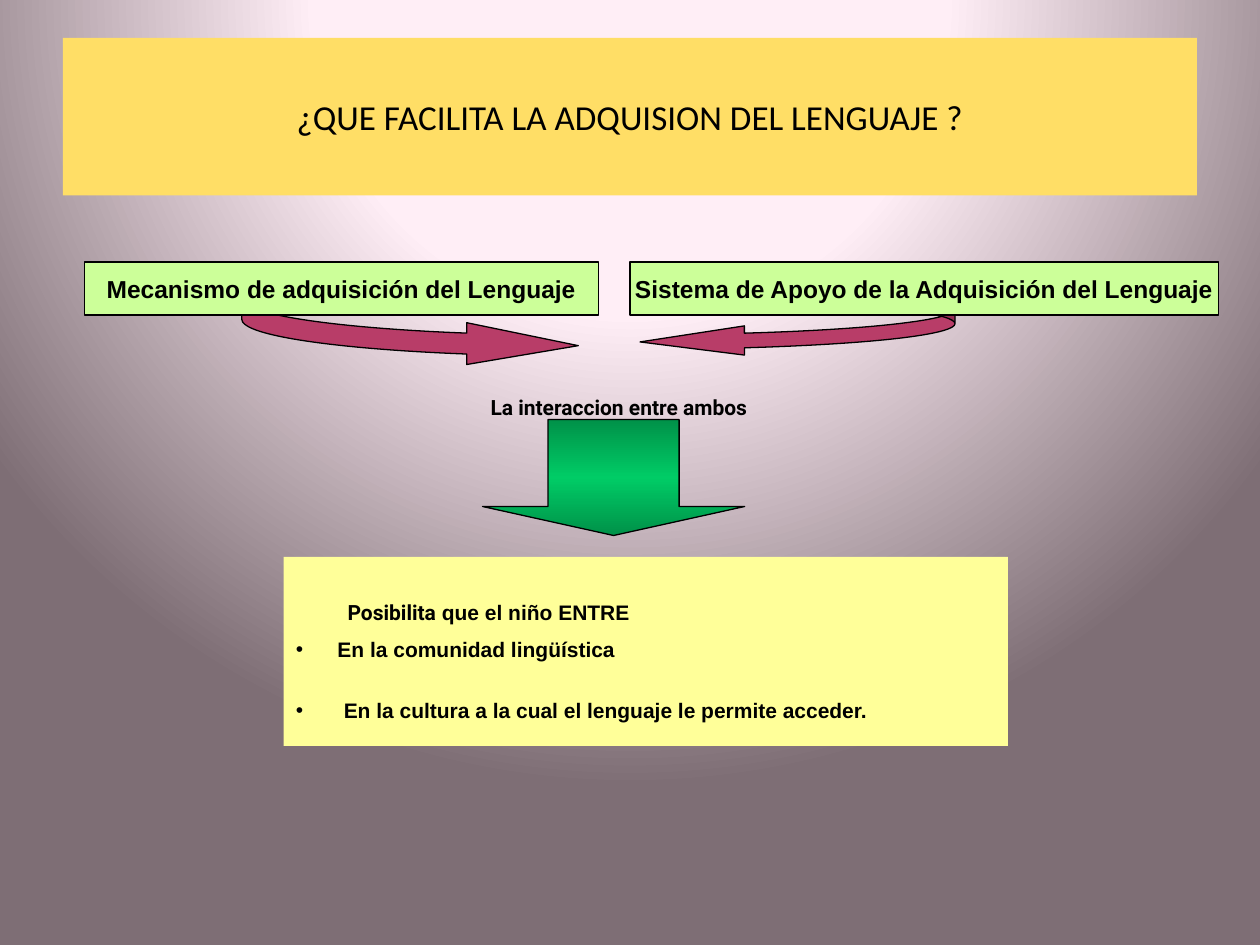
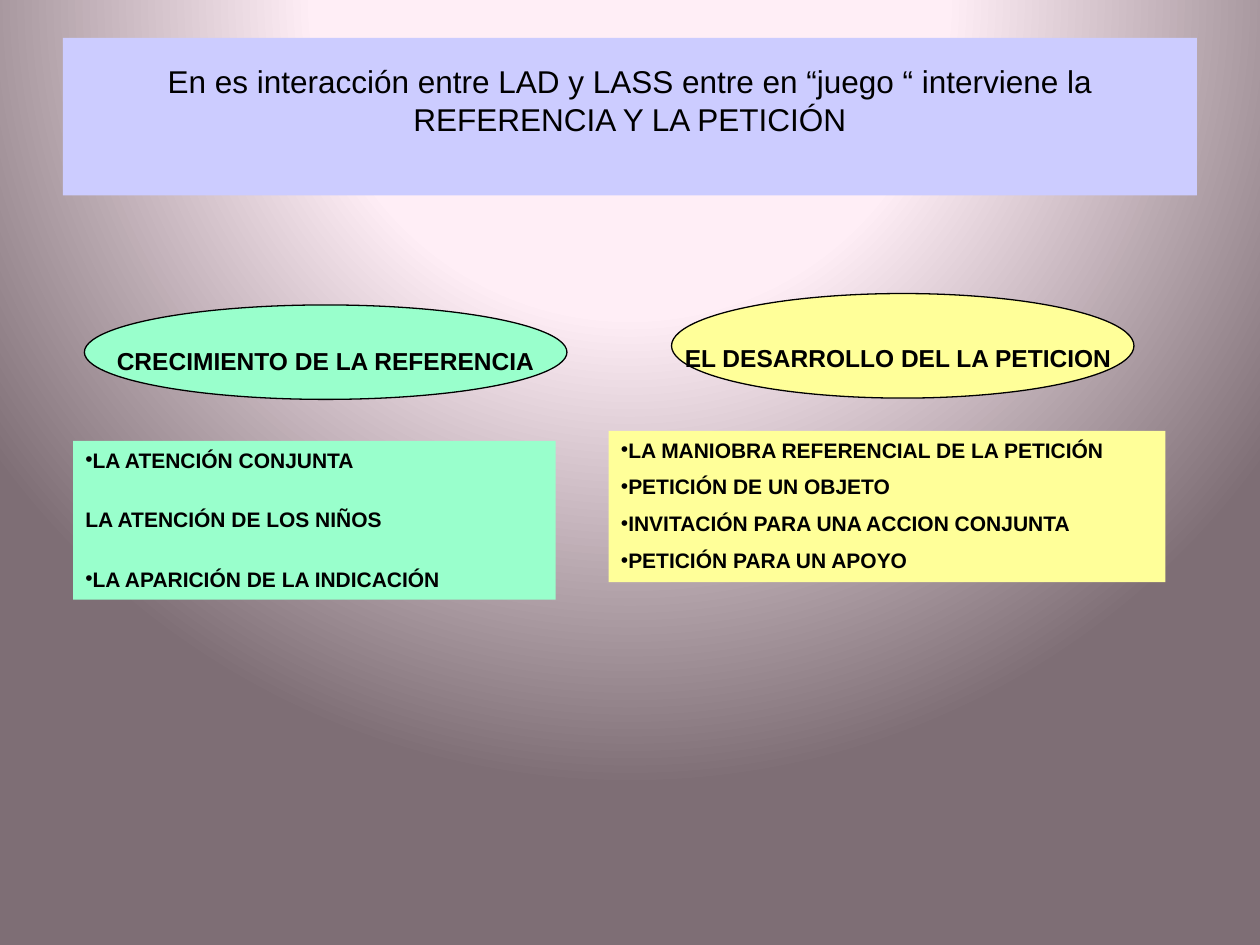
from pptx import Presentation, oxml
from pptx.dml.color import RGBColor
from pptx.enum import shapes, text as t
from pptx.oxml import ns
from pptx.util import Inches, Pt

COLORS = {
    "black": "000000", "gold": "FFDE66", "lavender": "CCCCFF", "lime": "CCFF99",
    "yellow": "FFFF99", "mint": "99FFCC", "berry": "B83D68",
    "glow": "FFF1F8", "pink": "FFEEF6", "mauve": "7E6E75",
    "forest": "009249", "emerald": "00CC66",
}
SHAPE = shapes.MSO_SHAPE
ALIGN = t.PP_ALIGN
LINE_GAP = 6.6
BLANK_LINE = 13.8


def rgb(name):
    return RGBColor.from_string(COLORS[name])


def paint_gradient(fill, owner, stops, direction):
    fill.gradient()
    old = owner.xpath(".//a:gradFill")[0]
    marks = "".join(
        f'<a:gs pos="{place * 1000}"><a:srgbClr val="{COLORS[name]}"/></a:gs>'
        for place, name in stops)
    new = oxml.parse_xml(
        f'<a:gradFill {ns.nsdecls("a")} rotWithShape="1">'
        f'<a:gsLst>{marks}</a:gsLst>{direction}</a:gradFill>')
    old.getparent().replace(old, new)


def write(box, text, font="Arial", size=12, bold=True, align=ALIGN.LEFT,
          before=0, bullet=False, indent=0, lead=None):
    frame = box.text_frame
    para = frame.paragraphs[0] if not frame.text else frame.add_paragraph()
    para.alignment = align
    para.space_before = Pt(before)
    spans = [(text, font)]
    if lead:
        spans.insert(0, lead)
    for words, face in spans:
        span = para.add_run()
        span.text = words
        span.font.name = face
        span.font.size = Pt(size)
        span.font.bold = bold
        span.font.color.rgb = rgb("black")
    props = para._p.get_or_add_pPr()
    props.set("marL", str(Inches(indent)))
    props.set("indent", str(-Inches(indent) if bullet else 0))
    if bullet:
        props.append(oxml.parse_xml(f'<a:buFont {ns.nsdecls("a")} typeface="Arial"/>'))
        props.append(oxml.parse_xml(f'<a:buChar {ns.nsdecls("a")} char="•"/>'))


class Deck:
    def __init__(self):
        self.deck = Presentation()
        self.deck.slide_width, self.deck.slide_height = Inches(10), Inches(7.5)
        master = self.deck.slide_master
        paint_gradient(
            master.background.fill, master.element,
            [(0, "glow"), (40, "pink"), (100, "mauve")],
            '<a:path path="circle"><a:fillToRect l="50000" t="-80000" '
            'r="50000" b="180000"/></a:path>')
        self.page = None

    def new_page(self):
        self.page = self.deck.slides.add_slide(self.deck.slide_layouts[6])

    def shape(self, kind, place, fill=None, outline=True, adjust=()):
        item = self.page.shapes.add_shape(kind, *map(Inches, place))
        item.shadow.inherit = False
        if fill:
            item.fill.solid()
            item.fill.fore_color.rgb = rgb(fill)
        if outline:
            item.line.color.rgb = rgb("black")
            item.line.width = Pt(0.75)
        else:
            item.line.fill.background()
        for index, value in enumerate(adjust):
            item.adjustments[index] = value
        return item

    def panel(self, place, fill, top=0.05):
        box = self.shape(SHAPE.RECTANGLE, place, fill, outline=False)
        box.text_frame.word_wrap = True
        box.text_frame.vertical_anchor = t.MSO_ANCHOR.TOP
        box.text_frame.margin_top = Inches(top)
        return box

    def title(self, text, fill, font, size, anchor=t.MSO_ANCHOR.MIDDLE, top=0.05):
        box = self.panel((0.5, 0.3, 9, 1.25), fill, top)
        box.text_frame.vertical_anchor = anchor
        write(box, text, font=font, size=size, bold=False, align=ALIGN.CENTER)

    def label(self, kind, place, fill, text, top=0.05):
        box = self.shape(kind, place, fill)
        box.text_frame.word_wrap = False
        box.text_frame.vertical_anchor = t.MSO_ANCHOR.MIDDLE
        box.text_frame.margin_top = Inches(top)
        write(box, text, size=14, align=ALIGN.CENTER)

    def caption(self, place, text, **style):
        box = self.page.shapes.add_textbox(*map(Inches, place))
        box.text_frame.word_wrap = True
        write(box, text, align=ALIGN.RIGHT, **style)

    def down_arrow(self, place):
        arrow = self.shape(SHAPE.DOWN_ARROW, place, adjust=(0.5, 0.25))
        paint_gradient(arrow.fill, arrow._element,
                       [(0, "forest"), (50, "emerald"), (100, "forest")],
                       '<a:lin ang="5400000" scaled="1"/>')


def build_mechanisms(show):
    show.new_page()
    show.shape(SHAPE.CURVED_RIGHT_ARROW, (1.92, 2.08, 2.67, 0.83), "berry",
               adjust=(0.2, 0.4, 1.067))
    show.shape(SHAPE.CURVED_LEFT_ARROW, (5.08, 2.25, 2.5, 0.58), "berry",
               adjust=(0.2, 0.4, 1.429))
    show.title("¿QUE FACILITA LA ADQUISION DEL LENGUAJE ?", "gold", "Calibri", 20)
    for left, width, text in (
            (0.67, 4.08, "Mecanismo de adquisición del Lenguaje"),
            (5, 4.67, "Sistema de Apoyo de la Adquisición del Lenguaje")):
        show.label(SHAPE.RECTANGLE, (left, 2.08, width, 0.42), "lime", text)
    result = show.panel((2.25, 4.42, 5.75, 1.5), "yellow", top=0.34)
    write(result, " que el niño ENTRE", lead=("Posibilita", "Roboto"), indent=0.41)
    write(result, "En la comunidad lingüística", before=LINE_GAP,
          bullet=True, indent=0.33)
    write(result, "En la cultura a la cual el lenguaje le permite acceder.",
          before=LINE_GAP + BLANK_LINE, bullet=True, indent=0.38)
    show.caption((3.36, 3.08, 2.67, 0.3), "La interaccion entre ambos", font="Roboto")
    show.down_arrow((3.83, 3.33, 2.08, 0.92))


def build_reference_and_request(show):
    show.new_page()
    show.title("En es interacción entre LAD y LASS entre en “juego “ interviene la "
               "REFERENCIA Y LA PETICIÓN", "lavender", "Arial", 18,
               anchor=t.MSO_ANCHOR.TOP, top=0.19)
    reference = show.panel((0.58, 3.5, 3.83, 1.26), "mint")
    for index, (text, bullet) in enumerate((
            ("LA ATENCIÓN CONJUNTA", True),
            ("LA ATENCIÓN DE LOS NIÑOS", False),
            ("LA APARICIÓN DE LA INDICACIÓN", True))):
        write(reference, text, bullet=bullet,
              before=BLANK_LINE + 5.8 if index else 0)
    show.label(SHAPE.OVAL, (0.67, 2.42, 3.83, 0.75), "mint",
               "CRECIMIENTO DE LA REFERENCIA", top=0.19)
    show.shape(SHAPE.OVAL, (5.33, 2.33, 3.67, 0.83), "yellow")
    request = show.panel((4.83, 3.42, 4.42, 1.2), "yellow")
    for index, text in enumerate((
            "LA MANIOBRA REFERENCIAL DE LA PETICIÓN",
            "PETICIÓN DE UN OBJETO",
            "INVITACIÓN PARA UNA ACCION CONJUNTA",
            "PETICIÓN PARA UN APOYO")):
        write(request, text, bullet=True, before=LINE_GAP if index else 0)
    show.caption((5, 2.67, 3.92, 0.33), "EL DESARROLLO DEL LA PETICION", size=14)


def main():
    show = Deck()
    build_mechanisms(show)
    build_reference_and_request(show)
    show.deck.save("out.pptx")


if __name__ == "__main__":
    main()
